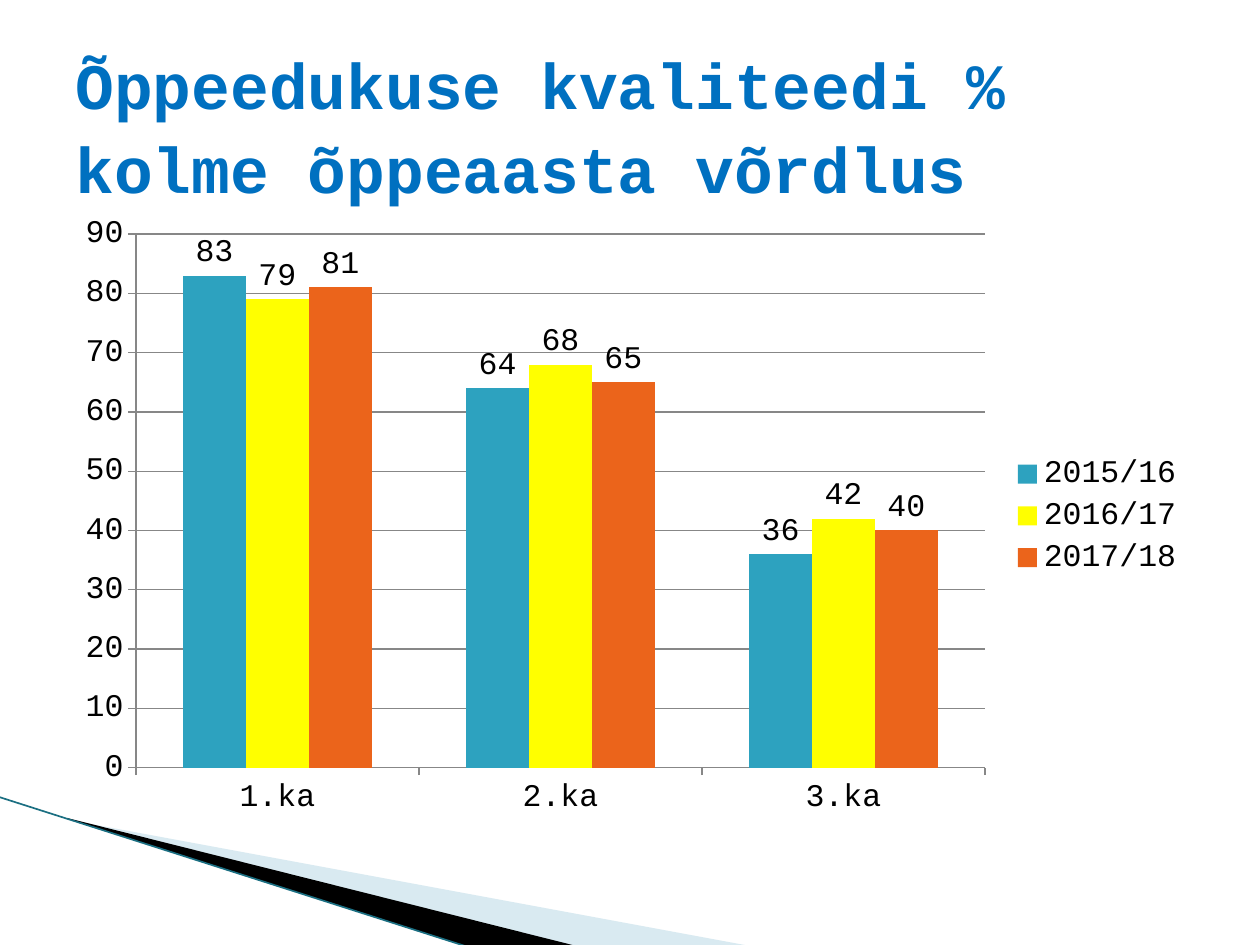
import pptx
import pptx.chart.data
import pptx.dml.color
import pptx.enum.chart
import pptx.enum.shapes
import pptx.enum.text
import pptx.oxml
import pptx.oxml.ns
import pptx.util

RGBColor = pptx.dml.color.RGBColor
TEAL = RGBColor(0x2D, 0xA2, 0xBF)
YELLOW = RGBColor(0xFF, 0xFF, 0x00)
ORANGE = RGBColor(0xEB, 0x64, 0x1B)
BLUE = RGBColor(0x00, 0x70, 0xC0)
PALE_BLUE = RGBColor(0xA0, 0xCB, 0xDC)
DARK_TEAL = RGBColor(0x1B, 0x6F, 0x82)
GREY = RGBColor(0x87, 0x87, 0x87)
BLACK = RGBColor(0, 0, 0)

FONT = "Courier New"
PX = 914400 // 126

TITLE = "Õppeedukuse kvaliteedi % \vkolme õppeaasta võrdlus"
TITLE_BOX = (63, 38, 1134, 157)
CHART_BOX = (63, 204, 1134, 624)
CATEGORIES = ["1.ka", "2.ka", "3.ka"]
SERIES = [
    ("2015/16", [83, 64, 36], TEAL),
    ("2016/17", [79, 68, 42], YELLOW),
    ("2017/18", [81, 65, 40], ORANGE),
]
# Outline, colour, opacity in percent
WEDGES = [
    ([(69, 820), (750, 946), (575, 946), (69, 819)], PALE_BLUE, 40),
    ([(67, 818), (576, 946), (469, 947), (68, 819)], BLACK, 100),
]
EDGE = (-1, 797, 468, 947)


def emu(lengths):
    return [n * PX for n in lengths]


def add_wedge(slide, points, color, opacity):
    builder = slide.shapes.build_freeform(*points[0], scale=PX)
    builder.add_line_segments(points[1:])
    sp = builder.convert_to_shape()
    sp.shadow.inherit = False
    sp.line.fill.background()
    sp.fill.solid()
    sp.fill.fore_color.rgb = color
    if opacity < 100:
        clr = sp.fill._xPr.find(".//" + pptx.oxml.ns.qn("a:srgbClr"))
        alpha = pptx.oxml.parse_xml(
            f'<a:alpha {pptx.oxml.ns.nsdecls("a")} val="{opacity * 1000}"/>')
        clr.append(alpha)


def add_edge(slide):
    line = slide.shapes.add_connector(
        pptx.enum.shapes.MSO_CONNECTOR.STRAIGHT, *emu(EDGE))
    line.line.color.rgb = DARK_TEAL
    line.line.width = pptx.util.Pt(0.95)
    line._element.spPr.append(
        pptx.oxml.parse_xml(f'<a:effectLst {pptx.oxml.ns.nsdecls("a")}/>'))


def add_chart(slide):
    data = pptx.chart.data.CategoryChartData()
    data.categories = CATEGORIES
    for name, values, _ in SERIES:
        data.add_series(name, values)
    chart = slide.shapes.add_chart(
        pptx.enum.chart.XL_CHART_TYPE.COLUMN_CLUSTERED,
        *emu(CHART_BOX), data).chart
    chart.has_title = False
    chart.font.name = FONT
    chart.font.size = pptx.util.Pt(18)
    chart.font.color.rgb = BLACK

    chart.has_legend = True
    chart.legend.position = pptx.enum.chart.XL_LEGEND_POSITION.RIGHT
    chart.legend.include_in_layout = False

    plot = chart.plots[0]
    plot.vary_by_categories = False
    plot.gap_width = 150
    plot.overlap = 0
    for series, (_, _, color) in zip(plot.series, SERIES):
        series.format.fill.solid()
        series.format.fill.fore_color.rgb = color
        series.data_labels.show_value = True
        series.data_labels.position = (
            pptx.enum.chart.XL_LABEL_POSITION.OUTSIDE_END)

    value_axis = chart.value_axis
    value_axis.minimum_scale = 0
    value_axis.maximum_scale = 90
    value_axis.major_unit = 10
    value_axis.has_major_gridlines = True
    value_axis.major_gridlines.format.line.color.rgb = GREY
    for axis in (chart.category_axis, value_axis):
        axis.format.line.color.rgb = GREY
        axis.major_tick_mark = pptx.enum.chart.XL_TICK_MARK.OUTSIDE


def add_title(slide):
    tf = slide.shapes.add_textbox(*emu(TITLE_BOX)).text_frame
    tf.word_wrap = True
    tf.vertical_anchor = pptx.enum.text.MSO_ANCHOR.MIDDLE
    tf.margin_top = 18 * PX
    p = tf.paragraphs[0]
    p.text = TITLE
    p.line_spacing = 1.08
    p.font.name = FONT
    p.font.size = pptx.util.Pt(36.9)
    p.font.bold = True
    p.font.color.rgb = BLUE


def main():
    prs = pptx.Presentation()
    prs.slide_width, prs.slide_height = emu((1260, 945))
    slide = prs.slides.add_slide(prs.slide_layouts[6])
    for wedge in WEDGES:
        add_wedge(slide, *wedge)
    add_edge(slide)
    add_chart(slide)
    add_title(slide)
    prs.save("out.pptx")


if __name__ == "__main__":
    main()
